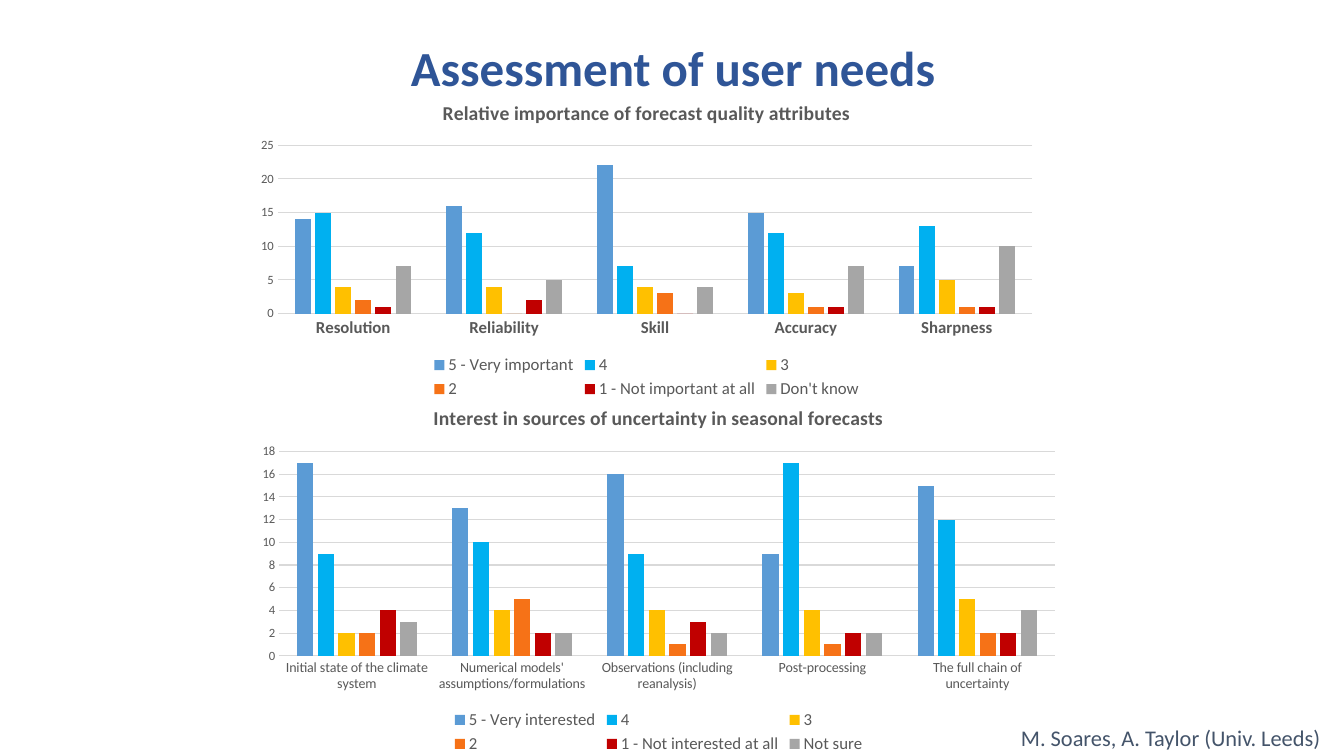
"""Build a slide with two clustered column charts on user needs for forecasts."""
from dataclasses import dataclass

import pptx
import pptx.chart.data
import pptx.dml.color
import pptx.enum.chart
import pptx.enum.text
import pptx.util

Pt = pptx.util.Pt


def rgb(value):
    return pptx.dml.color.RGBColor.from_string(value)


def apply(target, formats):
    for name, value in formats.items():
        setattr(target, name, value)


@dataclass(frozen=True)
class Theme:
    face: str = "Calibri"
    heading: str = "2F5597"
    credit: str = "44546A"
    chart_text: str = "595959"
    rule: str = "D9D9D9"
    ratings: tuple = ("5B9BD5", "00B0F0", "FFC000", "F67217", "C00000", "A6A6A6")
    heading_size: float = 35
    credit_size: float = 16
    chart_title_size: float = 14
    legend_size: float = 12
    value_size: float = 9


class SlideBuilder:
    def __init__(self, slide, theme):
        self.slide = slide
        self.theme = theme

    def style_font(self, font, size, color, bold=False):
        apply(font, {"name": self.theme.face, "size": Pt(size), "bold": bold})
        font.color.rgb = rgb(color)

    def title(self, text, box):
        heading = self.slide.shapes.title
        apply(heading, dict(zip(("left", "top", "width", "height"), map(Pt, box))))
        heading.text = text
        apply(heading.text_frame, {
            "vertical_anchor": pptx.enum.text.MSO_ANCHOR.MIDDLE,
            "auto_size": pptx.enum.text.MSO_AUTO_SIZE.NONE,
        })
        paragraph = heading.text_frame.paragraphs[0]
        apply(paragraph, {"alignment": pptx.enum.text.PP_ALIGN.CENTER, "line_spacing": 0.9})
        self.style_font(paragraph.runs[0].font, self.theme.heading_size, self.theme.heading, True)

    def credit(self, text, box):
        frame = self.slide.shapes.add_textbox(*map(Pt, box)).text_frame
        apply(frame, {"text": text, "word_wrap": True})
        paragraph = frame.paragraphs[0]
        paragraph.line_spacing = 1.04
        self.style_font(paragraph.runs[0].font, self.theme.credit_size, self.theme.credit)

    def columns(self, title, categories, ratings, box, category_size, category_bold):
        theme = self.theme
        answers = pptx.chart.data.CategoryChartData()
        answers.categories = categories
        for rating, counts in ratings.items():
            answers.add_series(rating, counts)
        chart = self.slide.shapes.add_chart(
            pptx.enum.chart.XL_CHART_TYPE.COLUMN_CLUSTERED, *map(Pt, box), answers).chart
        self.style_font(chart.font, 10, theme.chart_text)

        chart.has_title = True
        chart.chart_title.include_in_layout = False
        chart.chart_title.text_frame.text = title
        self.style_font(chart.chart_title.text_frame.paragraphs[0].runs[0].font,
                        theme.chart_title_size, theme.chart_text, True)

        chart.has_legend = True
        apply(chart.legend, {
            "position": pptx.enum.chart.XL_LEGEND_POSITION.BOTTOM,
            "include_in_layout": False,
        })
        self.style_font(chart.legend.font, theme.legend_size, theme.chart_text)

        no_ticks = pptx.enum.chart.XL_TICK_MARK.NONE
        for axis in (chart.category_axis, chart.value_axis):
            apply(axis, {"major_tick_mark": no_ticks, "minor_tick_mark": no_ticks})
        chart.value_axis.has_major_gridlines = True
        chart.value_axis.format.line.fill.background()
        for line in (chart.category_axis.format.line, chart.value_axis.major_gridlines.format.line):
            line.color.rgb = rgb(theme.rule)
            line.width = Pt(0.75)
        self.style_font(chart.category_axis.tick_labels.font,
                        category_size, theme.chart_text, category_bold)
        self.style_font(chart.value_axis.tick_labels.font, theme.value_size, theme.chart_text)

        plot = chart.plots[0]
        apply(plot, {"gap_width": 219, "overlap": -27, "vary_by_categories": False})
        for series, color in zip(plot.series, theme.ratings):
            series.format.fill.solid()
            series.format.fill.fore_color.rgb = rgb(color)


def main():
    deck = pptx.Presentation()
    apply(deck, {"slide_width": Pt(960), "slide_height": Pt(540)})
    page = SlideBuilder(deck.slides.add_slide(deck.slide_layouts[5]), Theme())

    page.title("Assessment of user needs", (49, 17.3, 864, 66.2))
    page.credit("M. Soares, A. Taylor (Univ. Leeds)", (722.2, 512.6, 235.4, 27.4))
    page.columns(
        "Relative importance of forecast quality attributes",
        ["Resolution", "Reliability", "Skill", "Accuracy", "Sharpness"],
        {
            "5 - Very important": (14, 16, 22, 15, 7),
            "4": (15, 12, 7, 12, 13),
            "3": (4, 4, 4, 3, 5),
            "2": (2, 0, 3, 1, 1),
            "1 - Not important at all": (1, 2, 0, 1, 1),
            "Don't know": (7, 5, 4, 7, 10),
        },
        (175, 59.8, 573.8, 228.2), 12, True)
    page.columns(
        "Interest in sources of uncertainty in seasonal forecasts",
        ["Initial state of the climate system", "Numerical models' assumptions/formulations",
         "Observations (including reanalysis)", "Post-processing", "The full chain of uncertainty"],
        {
            "5 - Very interested": (17, 13, 16, 9, 15),
            "4": (9, 10, 9, 17, 12),
            "3": (2, 4, 4, 4, 5),
            "2": (2, 5, 1, 1, 2),
            "1 - Not interested at all": (4, 2, 3, 2, 2),
            "Not sure": (3, 2, 2, 2, 4),
        },
        (175.7, 277.2, 589.7, 264.2), 10, False)
    deck.save("out.pptx")


if __name__ == "__main__":
    main()
